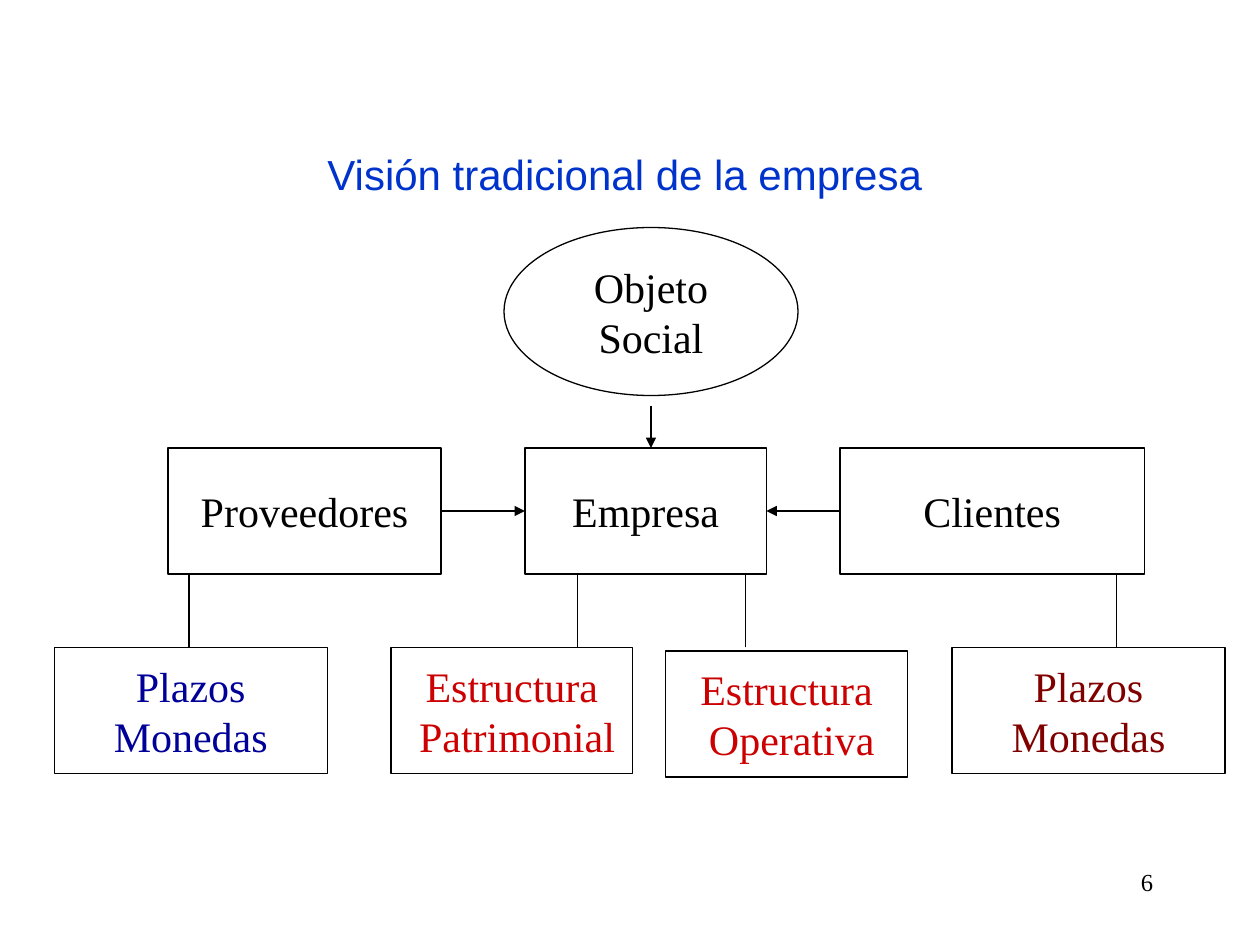
from lxml.etree import SubElement
from pptx import Presentation
from pptx.dml.color import RGBColor
from pptx.enum.shapes import MSO_CONNECTOR, MSO_SHAPE
from pptx.enum.text import MSO_ANCHOR, PP_ALIGN
from pptx.oxml.ns import qn
from pptx.util import Pt

COLORS = {"black": "000000", "title": "0033CC", "blue": "000099",
          "maroon": "800000", "red": "CC0000"}
SERIF = "Times New Roman"
TITLE = "Visión tradicional de la empresa"
PAGE = "6"

ROW, ROW_H, DETAIL = 256, 72, 370
ROW_END, ROW_MID = ROW + ROW_H, ROW + ROW_H / 2
RECT, OVAL = MSO_SHAPE.RECTANGLE, MSO_SHAPE.OVAL

NODES = [
    (RECT, (300, ROW, 138, ROW_H), ["Empresa"], "black"),
    (RECT, (96, ROW, 156, ROW_H), ["Proveedores"], "black"),
    (RECT, (480, ROW, 174, ROW_H), ["Clientes"], "black"),
    (RECT, (31, DETAIL, 156, ROW_H), ["Plazos", "Monedas"], "blue"),
    (RECT, (544, DETAIL, 156, ROW_H), ["Plazos", "Monedas"], "maroon"),
    (RECT, (223.5, DETAIL, 138, ROW_H), ["Estructura", " Patrimonial"], "red"),
    (RECT, (380.5, DETAIL + 2, 138, ROW_H), ["Estructura", " Operativa"], "red"),
    (OVAL, (288, 130, 168, 96), ["Objeto", "Social"], "black"),
]
ARROWS = [
    (252, ROW_MID, 300, ROW_MID),
    (480, ROW_MID, 438, ROW_MID),
    (372, 232, 372, ROW),
]
STEMS = [108, 330, 426, 638]


def add_text(tf, lines, color, size=24, font=SERIF, align=PP_ALIGN.CENTER):
    for i, line in enumerate(lines):
        p = tf.add_paragraph() if i else tf.paragraphs[0]
        p.alignment = align
        r = p.add_run()
        r.text = line
        r.font.size = Pt(size)
        r.font.name = font
        r.font.color.rgb = RGBColor.from_string(COLORS[color])


def set_line(sp):
    sp.line.color.rgb = RGBColor.from_string(COLORS["black"])
    sp.line.width = Pt(0.75)


def add_node(s, kind, box, lines, color):
    sp = s.shapes.add_shape(kind, *map(Pt, box))
    sp.shadow.inherit = False
    sp.fill.background()
    set_line(sp)
    tf = sp.text_frame
    tf.word_wrap = False
    tf.vertical_anchor = MSO_ANCHOR.MIDDLE
    add_text(tf, lines, color)


def add_link(s, ends, arrow=False):
    c = s.shapes.add_connector(MSO_CONNECTOR.STRAIGHT, *map(Pt, ends))
    set_line(c)
    if arrow:
        SubElement(c.line._get_or_add_ln(), qn("a:tailEnd"), type="triangle")
    SubElement(c._element.spPr, qn("a:effectLst"))


def main():
    """Build the slide on the traditional view of the company."""
    prs = Presentation()
    prs.slide_width, prs.slide_height = Pt(720), Pt(540)
    s = prs.slides.add_slide(prs.slide_layouts[5])

    title = s.shapes.title
    title.left, title.top, title.width, title.height = map(Pt, (84, 81, 546, 36))
    title.text_frame.vertical_anchor = MSO_ANCHOR.MIDDLE
    add_text(title.text_frame, [TITLE], "title", font="Arial")

    for node in NODES:
        add_node(s, *node)
    for ends in ARROWS:
        add_link(s, ends, arrow=True)
    for x in STEMS:
        add_link(s, (x, DETAIL, x, ROW_END))

    tf = s.shapes.add_textbox(*map(Pt, (516, 492, 150, 36))).text_frame
    tf.word_wrap = True
    add_text(tf, [PAGE], "black", size=14, align=PP_ALIGN.RIGHT)
    prs.save("out.pptx")


if __name__ == "__main__":
    main()
